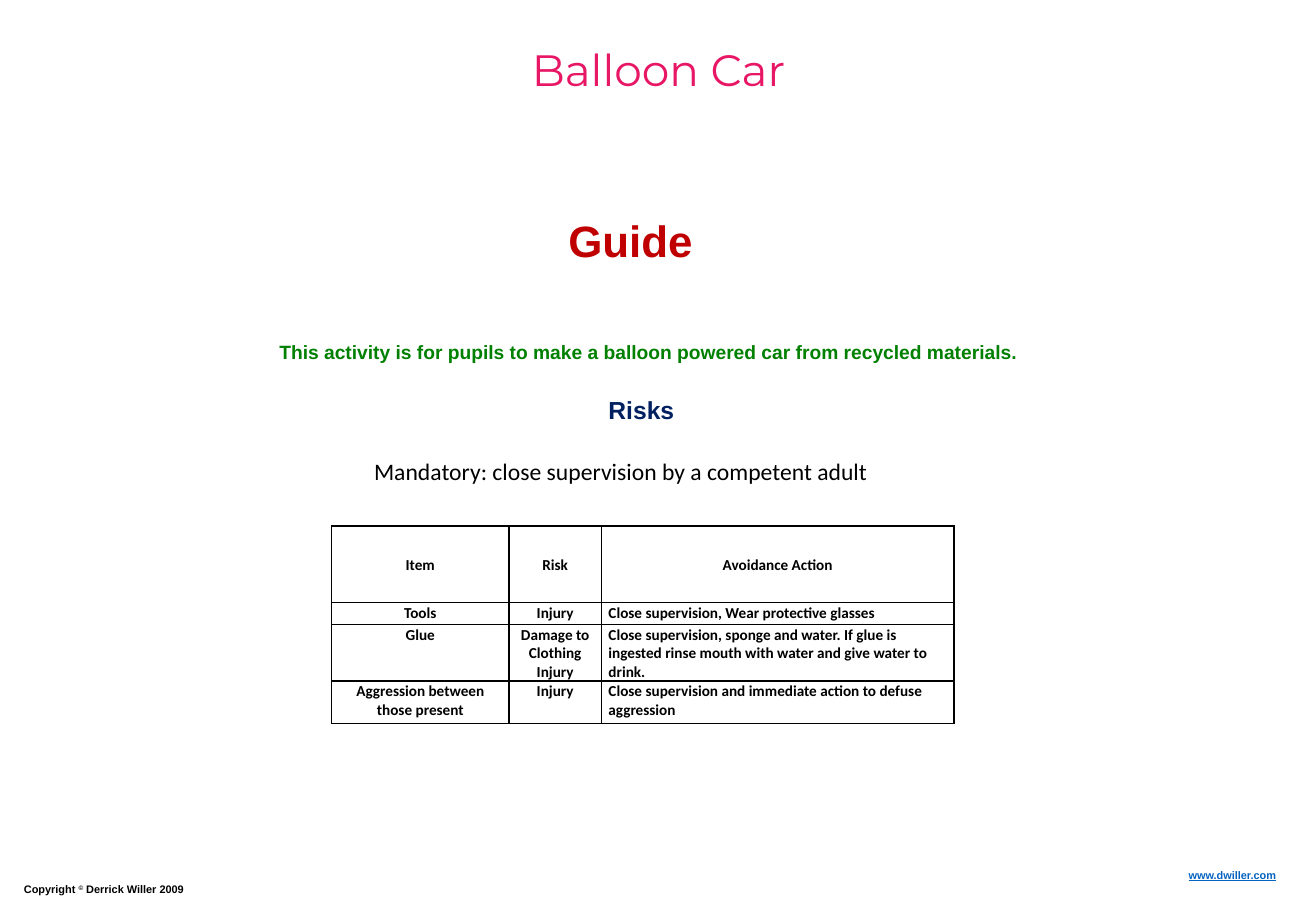
from lxml import etree
from pptx import Presentation
from pptx.dml.color import RGBColor
from pptx.enum.text import MSO_ANCHOR, PP_ALIGN
from pptx.oxml.ns import qn
from pptx.util import Cm, Pt

LEFT, CENTER, RIGHT = PP_ALIGN.LEFT, PP_ALIGN.CENTER, PP_ALIGN.RIGHT
TOP, MIDDLE = MSO_ANCHOR.TOP, MSO_ANCHOR.MIDDLE
COLORS = {"black": "000000", "pink": "E81766", "red": "C00000",
          "green": "008000", "navy": "002060", "link": "0563C1"}

deck = Presentation()
deck.slide_width, deck.slide_height = Cm(27.51), Cm(19.05)
page = deck.slides.add_slide(deck.slide_layouts[6])


def add_span(para, text, color, **formats):
    span = para.add_run()
    span.text = text
    span.font.color.rgb = RGBColor.from_string(COLORS[color])
    for name, value in formats.items():
        setattr(span.font, name, value)
    return span


def add_text(left, top, width, height, align=LEFT, wrap=True):
    box = page.shapes.add_textbox(Cm(left), Cm(top), Cm(width), Cm(height))
    box.text_frame.word_wrap = wrap
    para = box.text_frame.paragraphs[0]
    para.alignment = align
    return para


# Footer: copyright line and web address
footer = {"name": "Arial", "size": Pt(6.5), "bold": True}
para = add_text(0.25, 18.34, 11.66, 0.53)
add_span(para, "Copyright ", "black", **footer)
sign = add_span(para, "©", "black", **footer)
sign.font._element.set("baseline", "30000")
add_span(para, " Derrick Willer 2009", "black", **footer)
para = add_text(24.16, 18.03, 2.77, 0.53, RIGHT)
add_span(para, "www.dwiller.com", "link", underline=True, **footer)

# Headings and statements
headings = [
    ("Balloon Car", (10.06, 0.76, 7.42, 1.63, CENTER), "pink", "Montserrat", 26, False),
    ("Guide", (11.63, 4.34, 3.15, 1.37, LEFT, False), "red", "Arial", 26, True),
    ("This activity is for pupils to make a balloon powered car from recycled materials.",
     (5.59, 6.99, 18.39, 0.74), "green", "Arial", 11.4, True),
    ("Risks", (12.47, 8.13, 1.91, 0.89, LEFT, False), "navy", "Arial", 14.6, True),
    ("Mandatory: close supervision by a competent adult",
     (7.57, 9.42, 11.71, 0.86, LEFT, False), "black", "Calibri", 14, False),
]
for text, place, color, font, size, bold in headings:
    add_span(add_text(*place), text, color, name=font, size=Pt(size), bold=bold)

# Risk table
risks = [
    ("Item", "Risk", "Avoidance Action"),
    ("Tools", "Injury", "Close supervision, Wear protective glasses"),
    ("Glue", "Damage to Clothing\nInjury",
     "Close supervision, sponge and water. If glue is ingested rinse mouth "
     "with water and give water to drink."),
    ("Aggression between those present", "Injury",
     "Close supervision and immediate action to defuse aggression"),
]
widths = [3.71, 1.93, 7.37]
heights = [1.6, 0.46, 1.17, 0.89]
frame = page.shapes.add_table(len(risks), len(widths), Cm(6.93), Cm(11),
                              Cm(sum(widths)), Cm(sum(heights)))
table = frame.table
table.first_row = table.horz_banding = False
for column, width in zip(table.columns, widths):
    column.width = Cm(width)
for row, height in zip(table.rows, heights):
    row.height = Cm(height)

cell_format = {"margin_left": Cm(0.15), "margin_right": Cm(0.15),
               "margin_top": Cm(0.03), "margin_bottom": Cm(0)}
for row_index, texts in enumerate(risks):
    for column_index, text in enumerate(texts):
        cell = table.cell(row_index, column_index)
        for name, value in cell_format.items():
            setattr(cell, name, value)
        cell.vertical_anchor = MIDDLE if row_index == 0 else TOP
        for line_index, line in enumerate(text.split("\n")):
            paras = cell.text_frame
            para = paras.add_paragraph() if line_index else paras.paragraphs[0]
            para.alignment = LEFT if row_index and column_index == 2 else CENTER
            add_span(para, line, "black", name="Calibri", size=Pt(9), bold=True)
        # Cell borders come before the fill
        properties = cell._tc.get_or_add_tcPr()
        for side in ("a:lnL", "a:lnR", "a:lnT", "a:lnB"):
            border = etree.SubElement(properties, qn(side), w=str(Pt(1)))
            paint = etree.SubElement(border, qn("a:solidFill"))
            etree.SubElement(paint, qn("a:srgbClr"), val=COLORS["black"])
        cell.fill.background()

deck.save("out.pptx")
